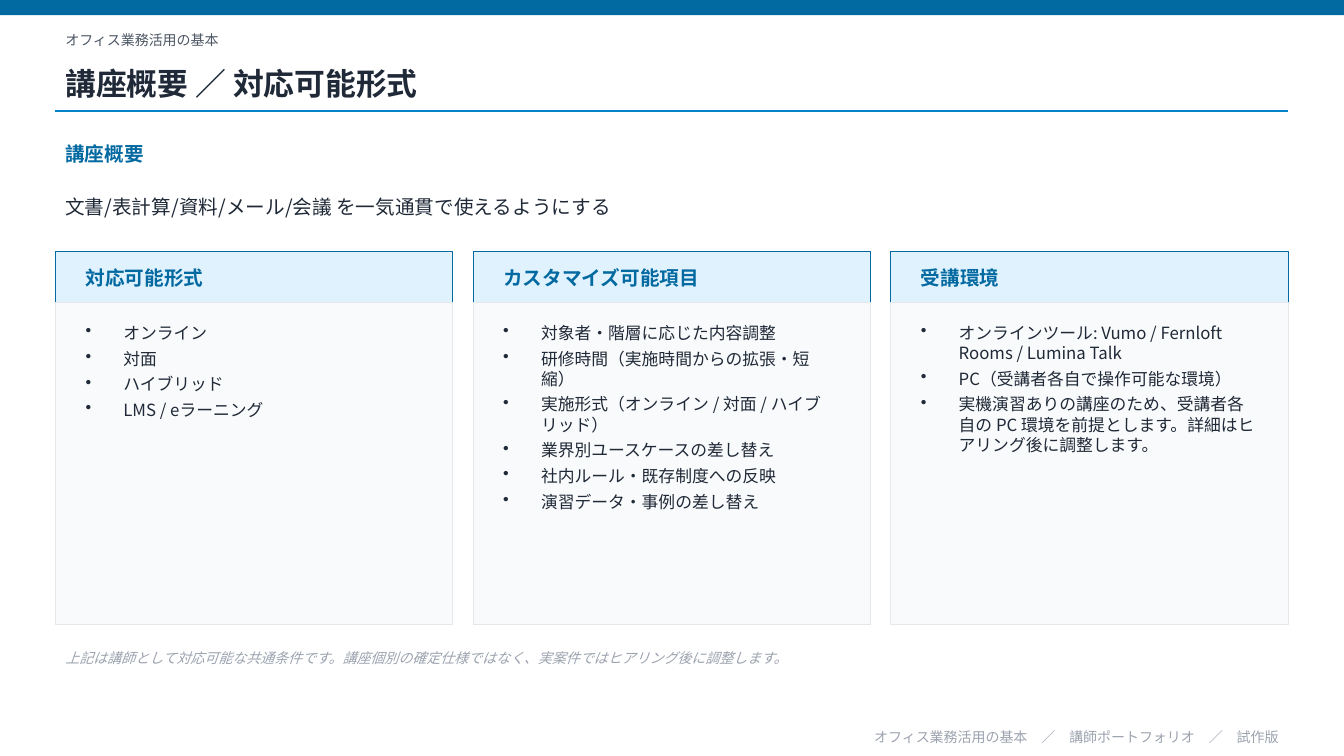
from lxml import etree
from pptx import Presentation
from pptx.dml.color import RGBColor
from pptx.enum import shapes, text
from pptx.oxml.ns import qn
from pptx.util import Pt

FONT = "Noto Sans CJK JP"
BLUE, SKY, PALE_BLUE = "0369A1", "0284C7", "E0F2FE"
INK, SLATE, MUTED = "1F2937", "4B5563", "9CA3AF"
PANEL, BORDER = "F9FAFB", "E5E7EB"

SLIDE_W, SLIDE_H = 960, 540
LEFT, WIDTH = 39.6, 880.6
GAP, PADDING = 14.4, 14.4
HEADER_TOP, HEADER_H, BODY_H = 180, 36, 230.4

COURSE = "オフィス業務活用の基本"
CARDS = [
    ("対応可能形式", ["オンライン", "対面", "ハイブリッド", "LMS / eラーニング"]),
    ("カスタマイズ可能項目", [
        "対象者・階層に応じた内容調整",
        "研修時間（実施時間からの拡張・短縮）",
        "実施形式（オンライン / 対面 / ハイブリッド）",
        "業界別ユースケースの差し替え",
        "社内ルール・既存制度への反映",
        "演習データ・事例の差し替え",
    ]),
    ("受講環境", [
        "オンラインツール: Vumo / Fernloft Rooms / Lumina Talk",
        "PC（受講者各自で操作可能な環境）",
        "実機演習ありの講座のため、受講者各自の PC 環境を前提とします。"
        "詳細はヒアリング後に調整します。",
    ]),
]


def rgb(value):
    return RGBColor.from_string(value)


def place(sp, x, y, w, h):
    sp.left, sp.top, sp.width, sp.height = Pt(x), Pt(y), Pt(w), Pt(h)


def add_bullet(p):
    """Give the paragraph a hanging round bullet."""
    pPr = p._p.get_or_add_pPr()
    pPr.set("marL", str(Pt(27)))
    pPr.set("indent", str(-Pt(27)))
    etree.SubElement(pPr, qn("a:buChar")).set("char", "•")


def write(sp, lines, size=14, color=INK, bold=False, italic=False,
          align=text.PP_ALIGN.LEFT, anchor=text.MSO_ANCHOR.MIDDLE,
          bullets=False, after=0):
    """Fill a shape with one formatted paragraph per line."""
    tf = sp.text_frame
    tf.word_wrap = True
    tf.auto_size = text.MSO_AUTO_SIZE.NONE
    tf.vertical_anchor = anchor
    for i, line in enumerate(lines):
        p = tf.paragraphs[0] if i == 0 else tf.add_paragraph()
        if bullets:
            add_bullet(p)
        p.alignment = align
        p.space_after = Pt(after)
        r = p.add_run()
        r.text = line
        font = r.font
        font.name, font.size = FONT, Pt(size)
        font.bold, font.italic = bold, italic
        font.color.rgb = rgb(color)
        etree.SubElement(r._r.get_or_add_rPr(), qn("a:ea")).set("typeface", FONT)


def add_text(slide, x, y, w, h, *lines, **fmt):
    sp = slide.shapes.add_textbox(Pt(x), Pt(y), Pt(w), Pt(h))
    write(sp, lines, **fmt)


def add_rect(slide, x, y, w, h, fill, line=None):
    sp = slide.shapes.add_shape(shapes.MSO_SHAPE.RECTANGLE,
                                Pt(x), Pt(y), Pt(w), Pt(h))
    sp.shadow.inherit = False
    sp.fill.solid()
    sp.fill.fore_color.rgb = rgb(fill)
    if line:
        sp.line.color.rgb = rgb(line)
        sp.line.width = Pt(0.75)
    else:
        sp.line.fill.background()


def add_rule(slide, x, y, w):
    line = slide.shapes.add_connector(shapes.MSO_CONNECTOR.STRAIGHT,
                                      Pt(x), Pt(y), Pt(x + w), Pt(y))
    line.line.color.rgb = rgb(SKY)
    line.line.width = Pt(1)
    etree.SubElement(line._element.spPr, qn("a:effectLst"))


def add_title(slide, title):
    sp = slide.shapes.title
    place(sp, LEFT, 39.6, WIDTH, 39.6)
    write(sp, [title], size=22, bold=True)


def add_card(slide, x, w, heading, items):
    body_top = HEADER_TOP + HEADER_H
    text_x, text_w = x + PADDING, w - 2 * PADDING
    add_rect(slide, x, HEADER_TOP, w, HEADER_H, PALE_BLUE, BLUE)
    add_text(slide, text_x, HEADER_TOP, text_w, HEADER_H, heading,
             color=BLUE, bold=True)
    add_rect(slide, x, body_top, w, BODY_H, PANEL, BORDER)
    add_text(slide, text_x, body_top + 10.8, text_w, 205.2, *items, size=12,
             anchor=text.MSO_ANCHOR.TOP, bullets=True, after=4)


def main():
    prs = Presentation()
    prs.slide_width, prs.slide_height = Pt(SLIDE_W), Pt(SLIDE_H)
    slide = prs.slides.add_slide(prs.slide_layouts.get_by_name("Title Only"))
    slide.background.fill.solid()
    slide.background.fill.fore_color.rgb = rgb("FFFFFF")

    add_rect(slide, 0, 0, SLIDE_W, 10.8, BLUE)
    add_text(slide, LEFT, 18, WIDTH, 21.6, COURSE, size=10, color=SLATE)
    add_title(slide, "講座概要 ／ 対応可能形式")
    add_rule(slide, LEFT, 79.2, WIDTH)
    add_text(slide, LEFT, 97.2, WIDTH, 25.2, "講座概要", color=BLUE, bold=True)
    add_text(slide, LEFT, 126, WIDTH, 43.2,
             "文書/表計算/資料/メール/会議 を一気通貫で使えるようにする")

    card_w = (WIDTH - GAP * (len(CARDS) - 1)) / len(CARDS)
    for i, (heading, items) in enumerate(CARDS):
        add_card(slide, LEFT + i * (card_w + GAP), card_w, heading, items)

    add_text(slide, LEFT, 457.2, WIDTH, 25.2,
             "上記は講師として対応可能な共通条件です。講座個別の確定仕様ではなく、"
             "実案件ではヒアリング後に調整します。",
             size=10, color=MUTED, italic=True)
    add_text(slide, LEFT, 518.4, WIDTH, 15.8,
             f"{COURSE}　／　講師ポートフォリオ　／　試作版",
             size=10, color=MUTED, align=text.PP_ALIGN.RIGHT)
    prs.save("out.pptx")


if __name__ == "__main__":
    main()
